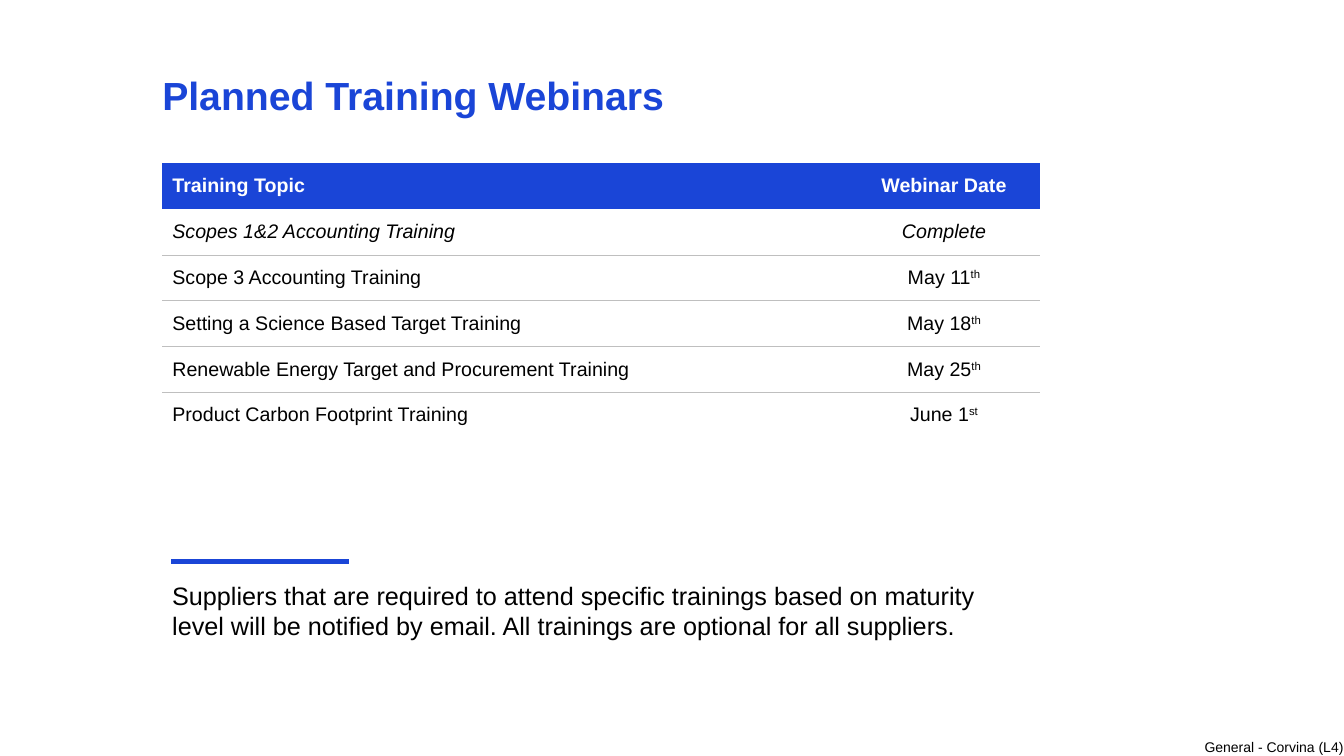
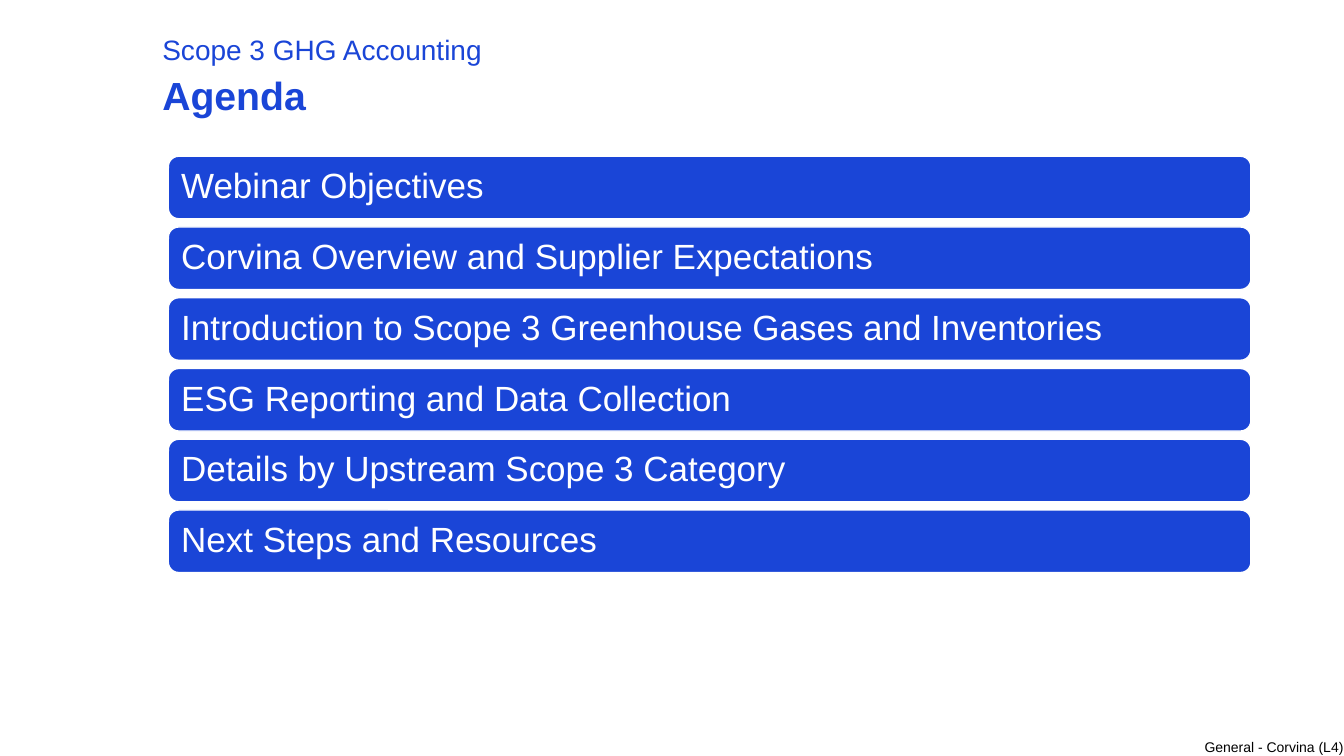
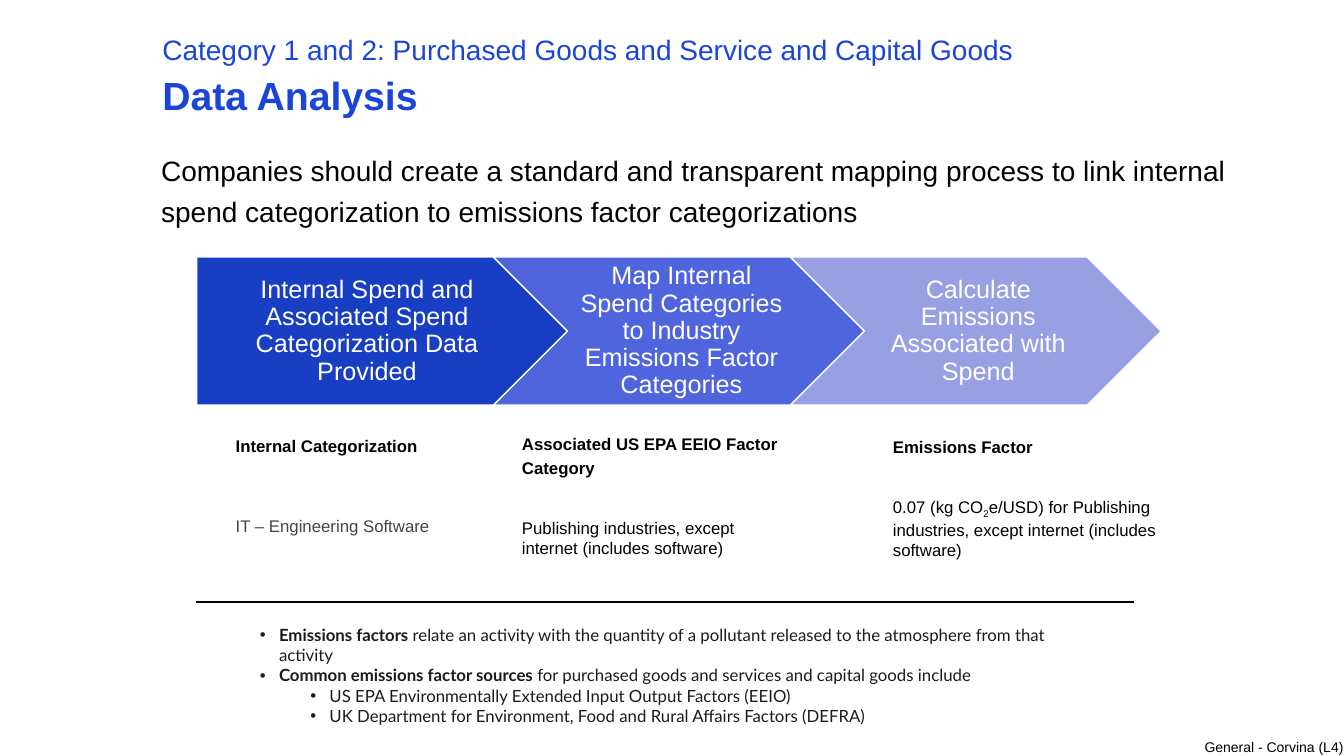
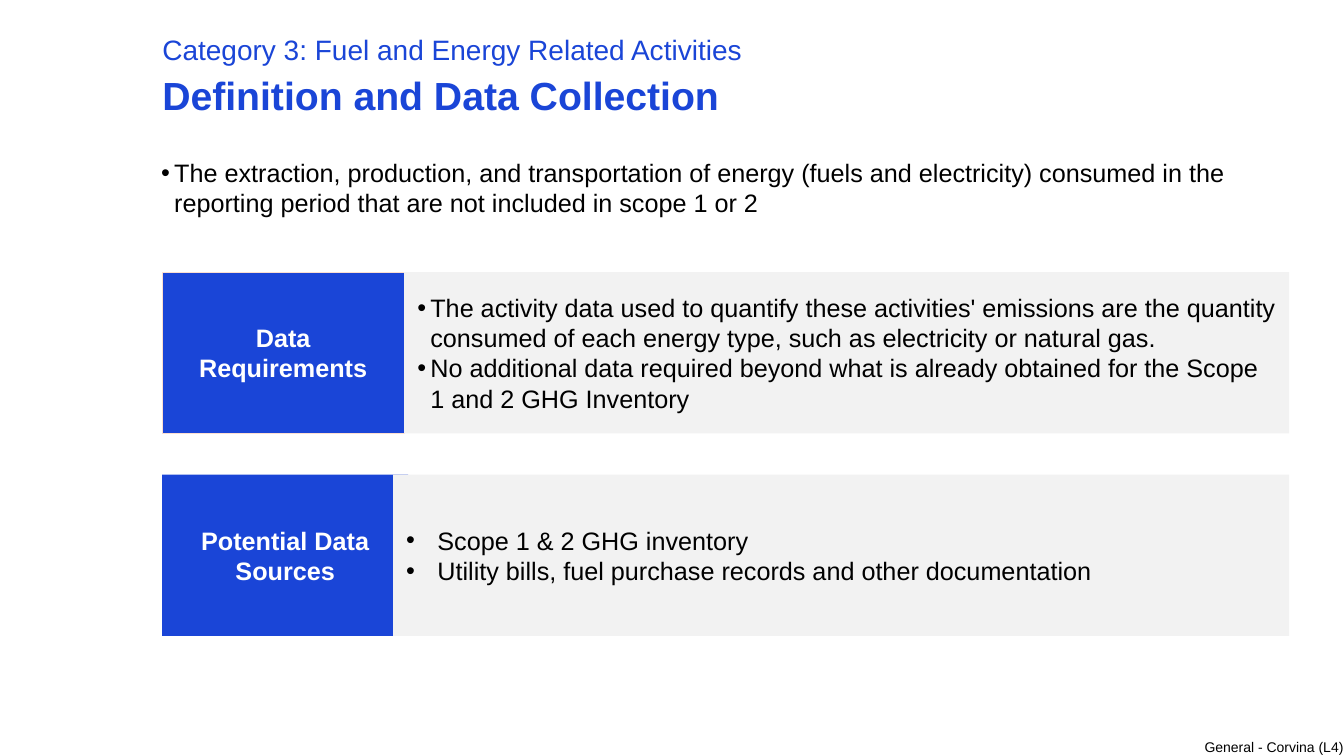
from dataclasses import dataclass
from typing import NamedTuple, Optional

from lxml.etree import SubElement
from pptx import Presentation
from pptx.dml.color import RGBColor
from pptx.enum.shapes import MSO_CONNECTOR, MSO_SHAPE as Preset
from pptx.enum.text import MSO_ANCHOR as Anchor, PP_ALIGN as Align
from pptx.oxml.ns import qn
from pptx.util import Emu, Inches, Pt

CELL = 0.1  # inches per grid column and row
SLIDE_COLUMNS, SLIDE_ROWS = 133.33, 75

BLUE, WHITE, BLACK = "1A45D7", "FFFFFF", "000000"
PALE_GREY, RULE_GREY, TEXT_GREY, INK = "F2F2F2", "BFBFBF", "444444", "1B1B1B"
PEACH = "FCDFD1"
PLAIN_TABLE = "{2D5ABB26-0587-4C30-8999-92F81FD0307C}"

MARGIN = 16.1
DEFAULT_INSETS = (1, 0.5, 1, 0.5)
HEADING_INSETS = (0, 0.5, 1, 0.5)
PANEL_INSETS = (1.3, 0.7, 1.3, 0.7)


class Area(NamedTuple):
    """A place on the grid, in columns and rows."""
    left: float
    top: float
    width: float
    height: float


@dataclass
class Span:
    text: str
    bold: Optional[bool] = None
    baseline: int = 0


@dataclass
class Para:
    spans: list[Span]
    bold: bool = False
    color: Optional[str] = None
    spacing: Optional[float] = None
    before: float = 0
    hanging: float = 0
    indent: float = 0
    level: int = 0


@dataclass
class Step:
    text: str
    preset: Preset
    fill: str
    left_inset: float


@dataclass
class Example:
    area: Area
    heading: str
    body: Para


@dataclass
class Panel:
    label: str
    top: float
    label_width: float
    body_left: float
    hanging: float
    points: list[str]
    outline: Optional[str] = None


def grid(count: float) -> Emu:
    return Inches(round(count * CELL, 4))


def rgb(color: str) -> RGBColor:
    return RGBColor.from_string(color)


def plain(text: str, **settings) -> Para:
    return Para([Span(text)], **settings)


def add_bullet(para, item: Para) -> None:
    props = para._p.get_or_add_pPr()
    props.set("marL", str(grid(item.indent + item.hanging)))
    props.set("indent", str(-grid(item.hanging)))
    SubElement(props, qn("a:buFont")).set("typeface", "Arial")
    SubElement(props, qn("a:buChar")).set("char", "•")


def write(frame, content: str | list[Para], *, size: float, color: str = BLACK,
          font: str = "Arial", bold: bool = False, italic: bool = False,
          align: Align = Align.LEFT, spacing: Optional[float] = None) -> None:
    """Fill a text frame with a string or with formatted paragraphs."""
    items = [plain(content)] if isinstance(content, str) else content
    for index, item in enumerate(items):
        para = frame.add_paragraph() if index else frame.paragraphs[0]
        if item.hanging:
            add_bullet(para, item)
        para.level = item.level
        para.alignment = align
        para.line_spacing = item.spacing or spacing
        if item.before:
            para.space_before = Pt(item.before)
        for span in item.spans:
            run = para.add_run()
            run.text = span.text
            run.font.name, run.font.size = font, Pt(size)
            run.font.bold = bold or item.bold if span.bold is None else span.bold
            run.font.italic = italic
            run.font.color.rgb = rgb(item.color or color)
            if span.baseline:
                run._r.get_or_add_rPr().set("baseline", str(span.baseline * 1000))


def set_frame(frame, insets: tuple, anchor: Anchor, wrap: bool = True) -> None:
    frame.word_wrap = wrap
    frame.vertical_anchor = anchor
    (frame.margin_left, frame.margin_top,
     frame.margin_right, frame.margin_bottom) = map(grid, insets)


def add_text(page, area: Area, content: str | list[Para], *,
             insets: tuple = DEFAULT_INSETS, anchor: Anchor = Anchor.TOP,
             wrap: bool = True, **style) -> None:
    box = page.shapes.add_textbox(*map(grid, area))
    set_frame(box.text_frame, insets, anchor, wrap)
    write(box.text_frame, content, **style)


def add_block(page, preset: Preset, area: Area, content: str | list[Para], *,
              fill: str, outline: Optional[str] = None, weight: float = 1,
              insets: tuple = PANEL_INSETS, **style) -> None:
    """Draw a filled preset shape with text centred on its height."""
    shape = page.shapes.add_shape(preset, *map(grid, area))
    shape.shadow.inherit = False
    shape.fill.solid()
    shape.fill.fore_color.rgb = rgb(fill)
    if outline:
        shape.line.color.rgb = rgb(outline)
        shape.line.width = Pt(weight)
    else:
        shape.line.fill.background()
    set_frame(shape.text_frame, insets, Anchor.MIDDLE)
    write(shape.text_frame, content, **style)


def add_rule(page, left: float, right: float, top: float, color: str, weight: float) -> None:
    rule = page.shapes.add_connector(
        MSO_CONNECTOR.STRAIGHT, grid(left), grid(top), grid(right), grid(top))
    rule.line.color.rgb = rgb(color)
    rule.line.width = Pt(weight)
    SubElement(rule._element.spPr, qn("a:effectLst"))


def add_page(deck, title: str, subtitle: str = ""):
    """Add a slide with the shared footer and headings."""
    page = deck.slides.add_slide(deck.slide_layouts[6])
    add_text(page, Area(119.5, 73.3, 14.2, 1.7), "General - Corvina (L4)",
             insets=(0, 0, 0, 0), wrap=False, size=10)
    add_text(page, Area(MARGIN, 1.8, 107.9, 10.5), title, insets=HEADING_INSETS,
             anchor=Anchor.BOTTOM, size=28, color=BLUE, bold=True, spacing=0.9)
    if subtitle:
        add_text(page, Area(MARGIN, 2.1, 107.9, 4.9), subtitle, insets=HEADING_INSETS,
                 anchor=Anchor.BOTTOM, size=20, color=BLUE)
    return page


def set_bottom_border(cell, color: str, weight: float) -> None:
    props = cell._tc.get_or_add_tcPr()
    border = props.makeelement(qn("a:lnB"), {"w": str(Pt(weight))})
    props.insert(0, border)
    SubElement(SubElement(border, qn("a:solidFill")), qn("a:srgbClr")).set("val", color)


def build_webinars(deck) -> None:
    page = add_page(deck, "Planned Training Webinars")
    # topic, date, ordinal ending
    rows = [
        ("Training Topic", "Webinar Date", ""),
        ("Scopes 1&2 Accounting Training", "Complete", ""),
        ("Scope 3 Accounting Training", "May 11", "th"),
        ("Setting a Science Based Target Training", "May 18", "th"),
        ("Renewable Energy Target and Procurement Training", "May 25", "th"),
        ("Product Carbon Footprint Training", "June 1", "st"),
    ]
    widths = (68, 19.1)
    area = Area(MARGIN, 16.2, sum(widths), 27.24)
    table = page.shapes.add_table(len(rows), len(widths), *map(grid, area)).table
    table.first_row = table.horz_banding = False
    table._tbl.tblPr.find(qn("a:tableStyleId")).text = PLAIN_TABLE
    for column, width in zip(table.columns, widths):
        column.width = grid(width)
    for index, (topic, date, ending) in enumerate(rows):
        header, done = index == 0, date == "Complete"
        date_spans = [Span(date)] + ([Span(ending, baseline=30)] if ending else [])
        contents = ([plain(topic)], [Para(date_spans)])
        for cell, content, align in zip(table.rows[index].cells, contents,
                                        (Align.LEFT, Align.CENTER)):
            cell.vertical_anchor = Anchor.MIDDLE
            if header:
                cell.fill.solid()
                cell.fill.fore_color.rgb = rgb(BLUE)
            else:
                cell.fill.background()
                if index < len(rows) - 1:
                    set_bottom_border(cell, RULE_GREY, 0.5)
            write(cell.text_frame, content, size=14, color=WHITE if header else BLACK,
                  bold=header, italic=done, align=align)
    add_text(page, Area(MARGIN, 57.1, 85.3, 7.1),
             "Suppliers that are required to attend specific trainings based on maturity "
             "level will be notified by email. All trainings are optional for all suppliers.",
             size=18)
    add_rule(page, 17, 34.6, 55.7, BLUE, 3)


def build_agenda(deck) -> None:
    page = add_page(deck, "Agenda", "Scope 3 GHG Accounting")
    topics = [
        "Webinar Objectives",
        "Corvina Overview and Supplier Expectations",
        "Introduction to Scope 3 Greenhouse Gases and Inventories",
        "ESG Reporting and Data Collection",
        "Details by Upstream Scope 3 Category",
        "Next Steps and Resources",
    ]
    first_top, pitch = 15.5, 7.02
    for index, topic in enumerate(topics):
        add_block(page, Preset.ROUNDED_RECTANGLE,
                  Area(16.7, first_top + index * pitch, 107.4, 6.2), topic,
                  fill=BLUE, outline=WHITE, insets=(1, 0.7, 1, 0.7),
                  size=25, color=WHITE, spacing=0.9)


def build_analysis(deck) -> None:
    page = add_page(deck, "Data Analysis",
                    "Category 1 and 2: Purchased Goods and Service and Capital Goods")
    steps = [
        Step("Internal Spend and Associated Spend Categorization Data Provided",
             Preset.PENTAGON, "183FC3", 1),
        Step("Map Internal Spend Categories to Industry Emissions Factor Categories",
             Preset.CHEVRON, "4E65DE", 0.8),
        Step("Calculate Emissions Associated with Spend", Preset.CHEVRON, "98A0E4", 0.8),
    ]
    step_pitch = 29.45
    for index, step in enumerate(steps):
        add_block(page, step.preset, Area(19.5 + index * step_pitch, 25.5, 36.8, 14.7),
                  step.text, fill=step.fill, outline=WHITE,
                  insets=(step.left_inset, 0.5, 0.3, 0.5),
                  size=18, color=WHITE, align=Align.CENTER, spacing=0.9)

    examples = [
        Example(Area(22.4, 42.3, 28.4, 20), "Internal Categorization",
                plain("IT – Engineering Software", color=TEXT_GREY, spacing=1.2, before=40.5)),
        Example(Area(50.8, 42.1, 28.4, 20), "Associated US EPA EEIO Factor Category",
                plain("Publishing industries, except internet (includes software)",
                      before=28.5)),
        Example(Area(87.6, 42.4, 28.4, 20), "Emissions Factor",
                Para([Span("0.07 (kg CO"), Span("2", baseline=-25),
                      Span("e/USD) for Publishing industries, except internet "
                           "(includes software)")], before=28.5)),
    ]
    for example in examples:
        heading = plain(example.heading, bold=True, spacing=1.2)
        add_text(page, example.area, [heading, example.body], size=12)

    add_text(page, Area(15, 14.1, 110, 16.2),
             "Companies should create a standard and transparent mapping process to link "
             "internal spend categorization to emissions factor categorizations",
             size=20, spacing=1.2)
    notes = [
        Para([Span("Emissions factors ", bold=True),
              Span("relate an activity with the quantity of a pollutant released to the "
                   "atmosphere from that activity")], hanging=1.9),
        Para([Span("Common emissions factor sources ", bold=True),
              Span("for purchased goods and services and capital goods include")], hanging=1.9),
        *(plain(source, hanging=1.9, indent=5, level=1) for source in (
            "US EPA Environmentally Extended Input Output Factors (EEIO)",
            "UK Department for Environment, Food and Rural Affairs Factors (DEFRA)")),
    ]
    add_text(page, Area(24.8, 61.5, 80.4, 13.1), notes, size=12, color=INK, font="Lato")
    add_rule(page, 19.4, 112.5, 59.7, BLACK, 1.5)


def build_definition(deck) -> None:
    page = add_page(deck, "Definition and Data Collection",
                    "Category 3: Fuel and Energy Related Activities")
    panels = [
        Panel("Data Requirements", 27, 24, 40.1, 1.3, [
            "The activity data used to quantify these activities' emissions are the quantity "
            "consumed of each energy type, such as electricity or natural gas.",
            "No additional data required beyond what is already obtained for the Scope 1 and 2 "
            "GHG Inventory"], outline=PEACH),
        Panel("Potential Data Sources", 47.1, 24.4, 39, 3.1, [
            "Scope 1 & 2 GHG inventory",
            "Utility bills, fuel purchase records and other documentation"]),
    ]
    panel_right, panel_height = 127.9, 16
    for panel in panels:
        add_block(page, Preset.RECTANGLE,
                  Area(MARGIN, panel.top, panel.label_width, panel_height), panel.label,
                  fill=BLUE, outline=panel.outline, weight=0.5,
                  size=18, color=WHITE, bold=True, align=Align.CENTER)
        add_block(page, Preset.RECTANGLE,
                  Area(panel.body_left, panel.top, panel_right - panel.body_left, panel_height),
                  [plain(point, hanging=panel.hanging) for point in panel.points],
                  fill=PALE_GREY, size=18)
    add_text(page, Area(15, 15.1, 110, 7.1),
             [plain("The extraction, production, and transportation of energy (fuels and "
                    "electricity) consumed in the reporting period that are not included in "
                    "scope 1 or 2", hanging=1.3)], size=18)


def main() -> None:
    deck = Presentation()
    deck.slide_width, deck.slide_height = grid(SLIDE_COLUMNS), grid(SLIDE_ROWS)
    for build in (build_webinars, build_agenda, build_analysis, build_definition):
        build(deck)
    deck.save("out.pptx")


if __name__ == "__main__":
    main()
